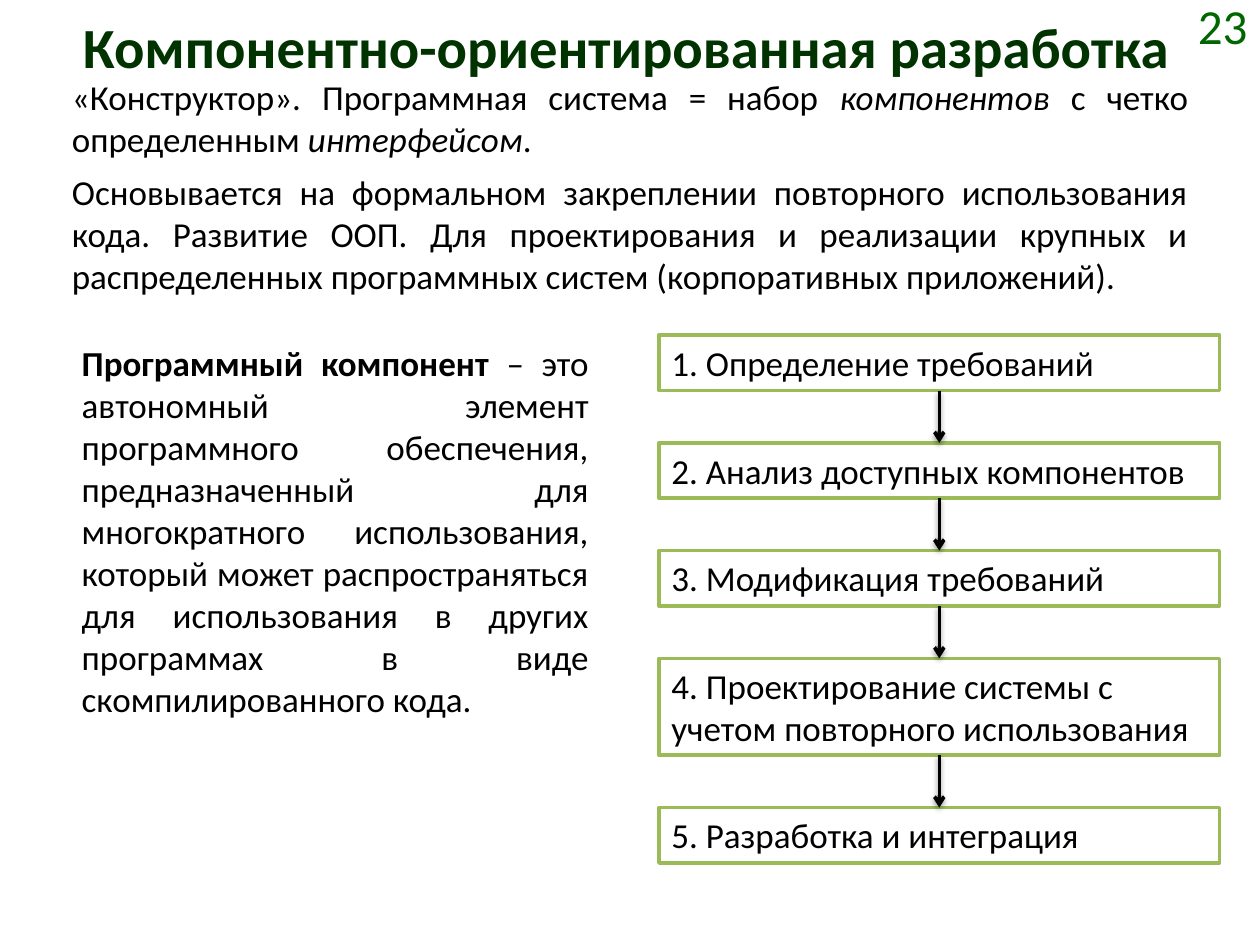
from lxml.etree import SubElement
from pptx import Presentation
from pptx.dml.color import RGBColor
from pptx.enum.shapes import MSO_CONNECTOR as Connector, MSO_SHAPE as Shape
from pptx.enum.text import MSO_ANCHOR as Anchor, MSO_AUTO_SIZE as AutoSize, PP_ALIGN as Align
from pptx.oxml.ns import qn
from pptx.util import Inches, Pt

WIDTH, HEIGHT = Inches(10), Inches(7.5)
FONT = "Calibri"
TITLE = "Компонентно-ориентированная разработка"
INTRO = [
    [("«Конструктор». Программная система = набор ", ""), ("компонентов", "italic"),
     (" с четко определенным ", ""), ("интерфейсом", "italic"), (". ", "")],
    [("Основывается на формальном закреплении повторного использования кода. "
      "Развитие ООП. Для проектирования и реализации крупных и распределенных "
      "программных систем (корпоративных приложений). ", "")],
]
DEFINITION = [
    [("Программный компонент ", "bold"),
     ("– это автономный элемент программного обеспечения, предназначенный для "
      "многократного использования, который может распространяться для использования "
      "в других программах в виде скомпилированного кода.", "")],
]
ONE_LINE, TWO_LINES = 5.87, 10.27
STEPS = [
    ("1. Определение требований", ONE_LINE),
    ("2. Анализ доступных компонентов", ONE_LINE),
    ("3. Модификация требований", ONE_LINE),
    ("4. Проектирование системы с учетом повторного использования", TWO_LINES),
    ("5. Разработка и интеграция", ONE_LINE),
]
STEPS_LEFT, STEPS_WIDTH, STEPS_TOP, STEPS_BOTTOM = 52.3, 44.5, 35.47, 91.33


def color(value):
    """Turn a hex string into a colour."""
    return RGBColor.from_string(value)


def area(left, top, width, height):
    """Turn percentages of the slide into lengths."""
    return (int(WIDTH * left / 100), int(HEIGHT * top / 100),
            int(WIDTH * width / 100), int(HEIGHT * height / 100))


def move(box, *shares):
    """Put a placeholder at the given shares of the slide."""
    box.left, box.top, box.width, box.height = area(*shares)


def style(span, size=20, ink="000000", bold=False, italic=False):
    """Format one run."""
    span.font.name, span.font.size = FONT, Pt(size)
    span.font.bold, span.font.italic = bold, italic
    span.font.color.rgb = color(ink)


def write_line(box, text, align, anchor, **look):
    """Fill a box with one uniformly formatted paragraph."""
    frame = box.text_frame
    frame.text = text
    frame.word_wrap, frame.auto_size = True, AutoSize.NONE
    frame.vertical_anchor = anchor
    para = frame.paragraphs[0]
    para.alignment = align
    style(para.runs[0], **look)


def write_justified(box, paragraphs):
    """Fill a box with justified, unbulleted paragraphs of mixed runs."""
    frame = box.text_frame
    frame.word_wrap, frame.auto_size = True, AutoSize.NONE
    for index, spans in enumerate(paragraphs):
        para = frame.add_paragraph() if index else frame.paragraphs[0]
        para.alignment = Align.JUSTIFY
        para.space_before = Pt(6 if index else 0)
        properties = para._p.get_or_add_pPr()
        properties.set("marL", "0")
        properties.set("indent", "0")
        SubElement(properties, qn("a:buNone"))
        for text, emphasis in spans:
            span = para.add_run()
            span.text = text
            style(span, bold=emphasis == "bold", italic=emphasis == "italic")


def add_step(page, text, top, height):
    """Add one outlined box of the process."""
    box = page.shapes.add_shape(Shape.RECTANGLE, *area(STEPS_LEFT, top, STEPS_WIDTH, height))
    box.shadow.inherit = False
    box.fill.solid()
    box.fill.fore_color.rgb = color("FFFFFF")
    box.line.color.rgb = color("9BBB59")
    box.line.width = Pt(2)
    write_line(box, text, Align.LEFT, Anchor.TOP)
    return box


def add_arrow(page, upper, lower):
    """Join two boxes with a downward arrow."""
    arrow = page.shapes.add_connector(Connector.STRAIGHT, 0, 0, 0, 0)
    arrow.begin_connect(upper, 2)
    arrow.end_connect(lower, 0)
    arrow.line.color.rgb = color("000000")
    arrow.line.width = Pt(2)
    SubElement(arrow.line._get_or_add_ln(), qn("a:tailEnd"), type="arrow")


def add_process(page):
    """Stack the steps with equal gaps and link them."""
    used = sum(height for _, height in STEPS)
    gap = (STEPS_BOTTOM - STEPS_TOP - used) / (len(STEPS) - 1)
    top, boxes = STEPS_TOP, []
    for text, height in STEPS:
        boxes.append(add_step(page, text, top, height))
        top += height + gap
    for upper, lower in zip(boxes, boxes[1:]):
        add_arrow(page, upper, lower)


def main():
    """Build the slide and save it."""
    deck = Presentation()
    deck.slide_width, deck.slide_height = WIDTH, HEIGHT
    page = deck.slides.add_slide(deck.slide_layouts[1])

    title = page.shapes.title
    move(title, 4.7, 0, 90, 12.53)
    write_line(title, TITLE, Align.CENTER, Anchor.TOP, size=32.4, ink="003300", bold=True)
    title.text_frame.margin_top = Pt(6.5)

    number = page.shapes.add_textbox(*area(89.8, 0, 10.2, 5.2))
    write_line(number, "23", Align.RIGHT, Anchor.MIDDLE, size=28, ink="006600")

    intro = page.placeholders[1]
    move(intro, 4.7, 7.33, 90.6, 24.93)
    write_justified(intro, INTRO)

    add_process(page)

    definition = page.shapes.add_textbox(*area(5.5, 35.47, 42.2, 41.73))
    write_justified(definition, DEFINITION)
    deck.save("out.pptx")


if __name__ == "__main__":
    main()
